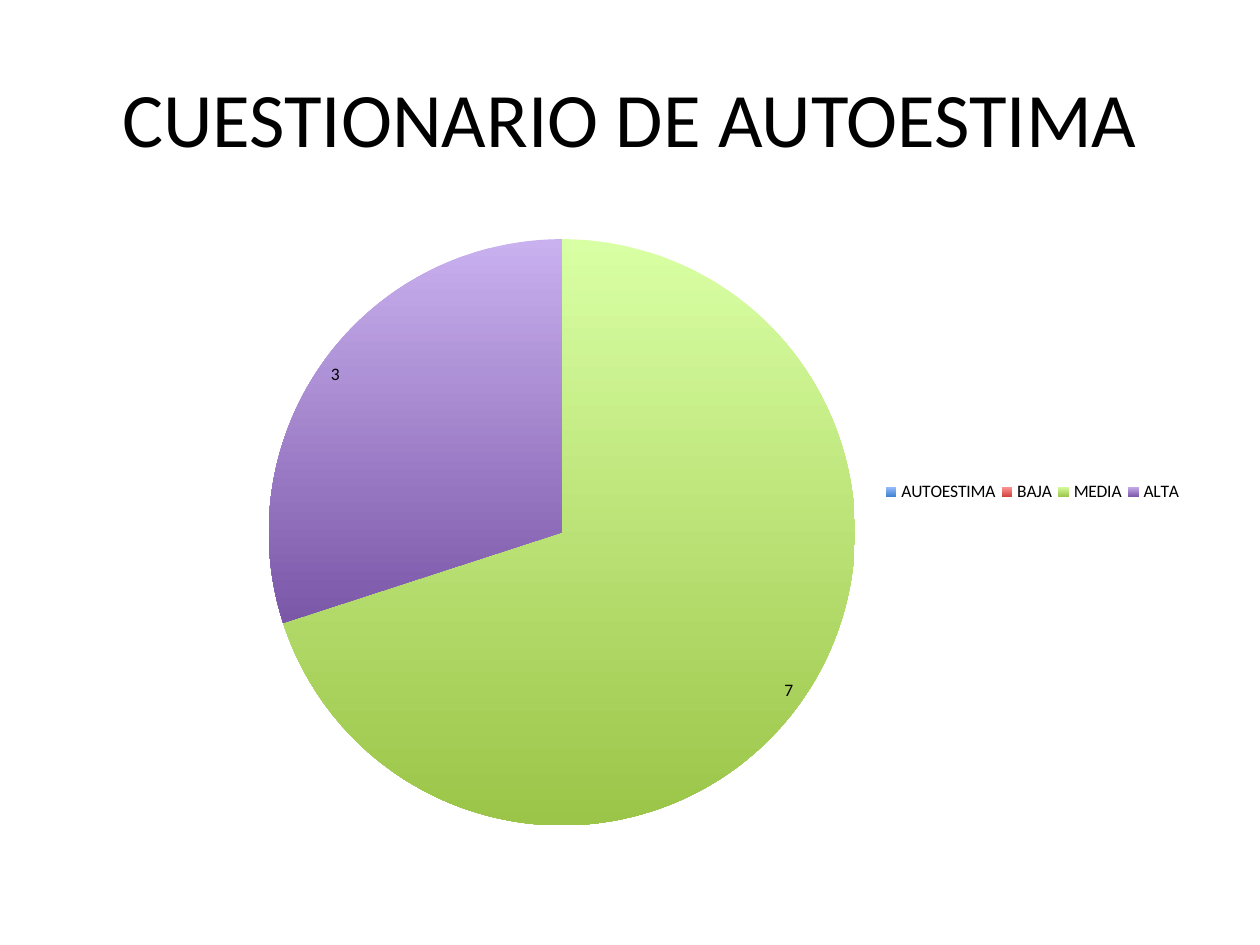
import dataclasses

import pptx
import pptx.chart.data
import pptx.dml.color
import pptx.enum.chart
import pptx.enum.text
import pptx.oxml
import pptx.oxml.ns
import pptx.util

Inches = pptx.util.Inches


@dataclasses.dataclass(frozen=True)
class Theme:
    font: str = "Calibri"
    title_size: int = 44
    chart_size: int = 10
    text: str = "000000"
    background: str = "FFFFFF"
    slices: tuple = (
        ("9BC1FF", "3F80CD"),
        ("FF9A99", "D1403C"),
        ("D9FFA4", "9BC548"),
        ("C9B0EF", "7B57A8"),
    )


def rgb(value):
    return pptx.dml.color.RGBColor.from_string(value)


class SlideBuilder:
    def __init__(self, slide, theme):
        self.slide = slide
        self.theme = theme
        slide.background.fill.solid()
        slide.background.fill.fore_color.rgb = rgb(theme.background)

    def style_font(self, font, size):
        font.name = self.theme.font
        font.size = pptx.util.Pt(size)
        font.color.rgb = rgb(self.theme.text)

    def title(self, wording, left, top, width, height):
        heading = self.slide.shapes.title
        heading.left, heading.top = Inches(left), Inches(top)
        heading.width, heading.height = Inches(width), Inches(height)
        frame = heading.text_frame
        frame.word_wrap = True
        frame.vertical_anchor = pptx.enum.text.MSO_ANCHOR.MIDDLE
        paragraph = frame.paragraphs[0]
        paragraph.alignment = pptx.enum.text.PP_ALIGN.CENTER
        run = paragraph.add_run()
        run.text = wording
        self.style_font(run.font, self.theme.title_size)

    def place(self, part, x, y, w, h, inner=False):
        target = '<c:layoutTarget val="inner"/>' if inner else ""
        layout = pptx.oxml.parse_xml(
            f'<c:layout {pptx.oxml.ns.nsdecls("c")}><c:manualLayout>{target}'
            '<c:xMode val="edge"/><c:yMode val="edge"/>'
            f'<c:x val="{x}"/><c:y val="{y}"/><c:w val="{w}"/><c:h val="{h}"/>'
            "</c:manualLayout></c:layout>"
        )
        for previous in part.findall(pptx.oxml.ns.qn("c:layout")):
            part.remove(previous)
        part.insert(1 if part.tag == pptx.oxml.ns.qn("c:legend") else 0, layout)

    def pie(self, levels, answers, left, top, width, height):
        results = pptx.chart.data.CategoryChartData()
        results.categories = levels
        results.add_series("Series 1", answers)
        chart = self.slide.shapes.add_chart(
            pptx.enum.chart.XL_CHART_TYPE.PIE,
            Inches(left), Inches(top), Inches(width), Inches(height), results,
        ).chart
        chart.has_title = False
        self.style_font(chart.font, self.theme.chart_size)

        chart.has_legend = True
        chart.legend.position = pptx.enum.chart.XL_LEGEND_POSITION.RIGHT
        chart.legend.include_in_layout = False
        self.style_font(chart.legend.font, self.theme.chart_size)

        plot = chart.plots[0]
        plot.vary_by_categories = True
        plot.has_data_labels = True
        labels = plot.data_labels
        labels.show_value = True
        labels.show_percentage = False
        labels.position = pptx.enum.chart.XL_LABEL_POSITION.INSIDE_END
        self.style_font(labels.font, self.theme.chart_size)

        for index, shades in enumerate(self.theme.slices):
            point = plot.series[0].points[index]
            fill = point.format.fill
            fill.gradient()
            fill.gradient_angle = 270
            for stop, shade in zip(fill.gradient_stops, shades):
                stop.color.rgb = rgb(shade)
            point.format.line.fill.background()

        plot_area = chart.element.find(".//" + pptx.oxml.ns.qn("c:plotArea"))
        legend = chart.element.find(".//" + pptx.oxml.ns.qn("c:legend"))
        self.place(plot_area, 0.18, 0.03, 0.52, 0.94, inner=True)
        self.place(legend, 0.72, 0.4, 0.27, 0.07)


def main():
    presentation = pptx.Presentation()
    presentation.slide_width = Inches(10)
    presentation.slide_height = Inches(7.5)
    slide = presentation.slides.add_slide(presentation.slide_layouts[5])
    builder = SlideBuilder(slide, Theme())
    builder.title("CUESTIONARIO DE AUTOESTIMA", 0.5, 0.3, 9, 1.25)
    builder.pie(
        ["AUTOESTIMA", "BAJA", "MEDIA", "ALTA"], [None, None, 7, 3],
        0.5, 1.75, 9, 4.95,
    )
    presentation.save("out.pptx")


if __name__ == "__main__":
    main()
